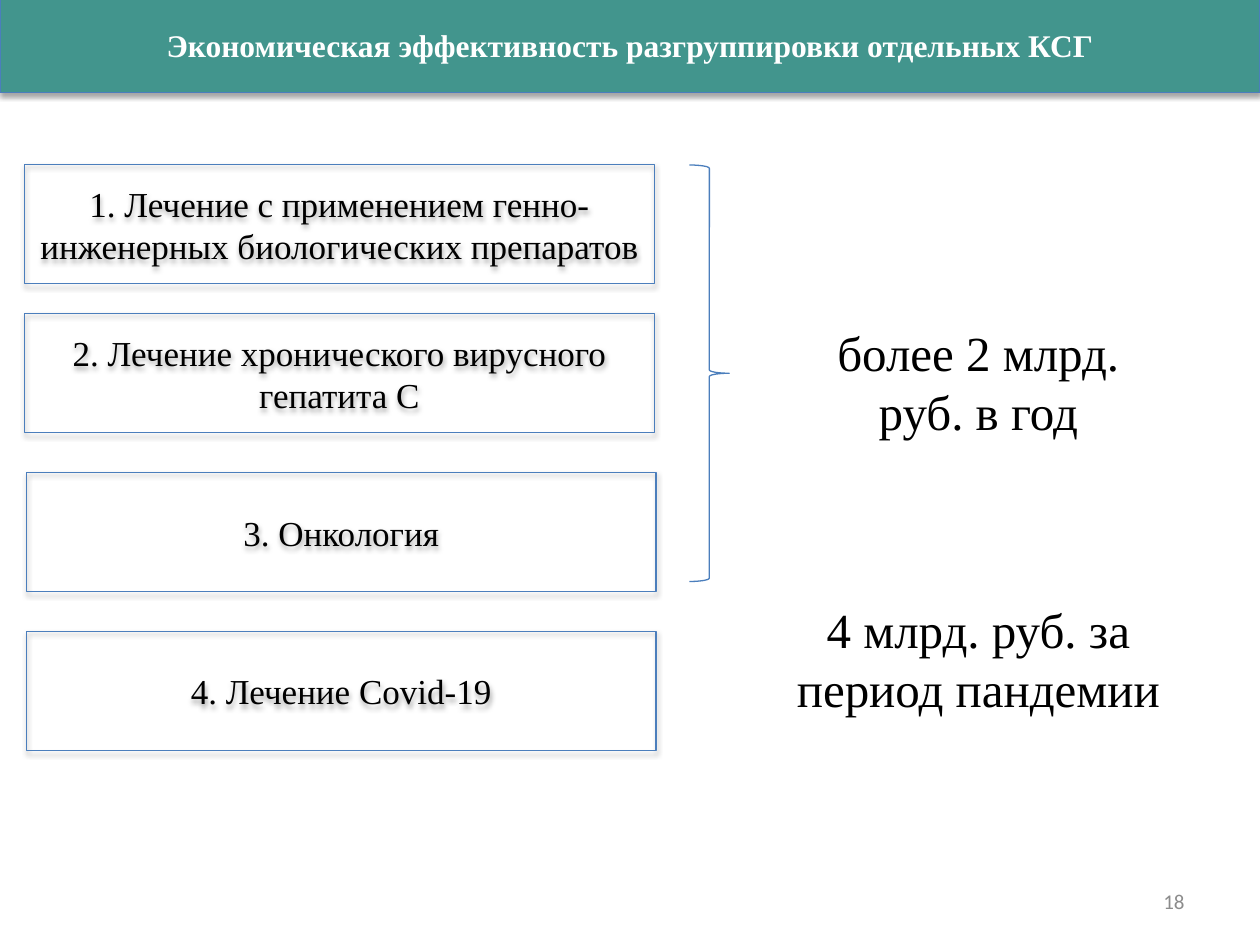
from pptx import Presentation
from pptx.dml.color import RGBColor
from pptx.enum.shapes import MSO_SHAPE as Kind
from pptx.enum.text import MSO_ANCHOR as Anchor, MSO_AUTO_SIZE as Fit, PP_ALIGN as Align
from pptx.oxml import parse_xml
from pptx.oxml.ns import nsdecls, qn
from pptx.util import Pt

TEAL = RGBColor(0x42, 0x95, 0x8D)
BLUE = RGBColor(0x4B, 0x7E, 0xBC)
GRAY = RGBColor(0x8C, 0x8C, 0x8C)
BLACK = RGBColor(0, 0, 0)
WHITE = RGBColor(255, 255, 255)
SERIF = "Times New Roman"
SANS = "Calibri"


class Deck:
    def __init__(self, slide):
        self.slide = slide
        self.shapes = slide.shapes

    def letter(self, shape, text, size, color=BLACK, font=SERIF, bold=False,
               align=Align.CENTER, anchor=Anchor.MIDDLE):
        frame = shape.text_frame
        frame.text = text
        frame.word_wrap = True
        frame.auto_size = Fit.NONE
        frame.vertical_anchor = anchor
        para = frame.paragraphs[0]
        para.alignment = align
        face = para.runs[0].font
        face.name, face.size, face.bold = font, Pt(size), bold
        face.color.rgb = color

    def outline(self, shape):
        shape.line.color.rgb = BLUE
        shape.line.width = Pt(0.75)
        shape.shadow.inherit = False

    def shade(self, shape):
        effects = shape.element.spPr.find(qn("a:effectLst"))
        effects.append(parse_xml(
            f'<a:outerShdw {nsdecls("a")} blurRad="{Pt(3.1)}" dist="{Pt(1.8)}" '
            'dir="5400000" rotWithShape="0"><a:srgbClr val="000000">'
            '<a:alpha val="35000"/></a:srgbClr></a:outerShdw>'))

    def title(self, text, left, top, width, height):
        shape = self.shapes.title
        shape.left, shape.top = Pt(left), Pt(top)
        shape.width, shape.height = Pt(width), Pt(height)
        shape.fill.solid()
        shape.fill.fore_color.rgb = TEAL
        self.outline(shape)
        self.shade(shape)
        self.letter(shape, text, 18, WHITE, bold=True)

    def frame(self, kind, left, top, width, height):
        shape = self.shapes.add_shape(kind, Pt(left), Pt(top), Pt(width), Pt(height))
        shape.fill.background()
        self.outline(shape)
        return shape

    def box(self, text, left, top, width, height):
        shape = self.frame(Kind.RECTANGLE, left, top, width, height)
        self.shade(shape)
        self.letter(shape, text, 20)

    def brace(self, left, top, width, height):
        self.frame(Kind.RIGHT_BRACE, left, top, width, height)

    def label(self, text, left, top, width, height, size, **style):
        shape = self.shapes.add_textbox(Pt(left), Pt(top), Pt(width), Pt(height))
        self.letter(shape, text, size, **style)


def main():
    show = Presentation()
    show.slide_width, show.slide_height = Pt(720), Pt(540)
    deck = Deck(show.slides.add_slide(show.slide_layouts[5]))

    deck.title("Экономическая эффективность разгруппировки отдельных КСГ",
               0, -2, 720, 55)
    items = [
        ("1. Лечение с применением генно-инженерных биологических препаратов", 14, 94),
        ("2. Лечение хронического вирусного гепатита С", 14, 179.3),
        ("3. Онкология", 15, 270),
        ("4. Лечение Covid-19", 15, 360.7),
    ]
    for text, left, top in items:
        deck.box(text, left, top, 360, 68)

    deck.brace(394, 94.3, 22.7, 238)
    sums = [("более 2 млрд. руб. в год", 181),
            ("4 млрд. руб. за период пандемии", 339)]
    for text, top in sums:
        deck.label(text, 445, top, 228, 75, 28, anchor=Anchor.TOP)
    deck.label("18", 516, 500.5, 168, 28.75, 12, color=GRAY, font=SANS,
               align=Align.RIGHT)

    show.save("out.pptx")


if __name__ == "__main__":
    main()
